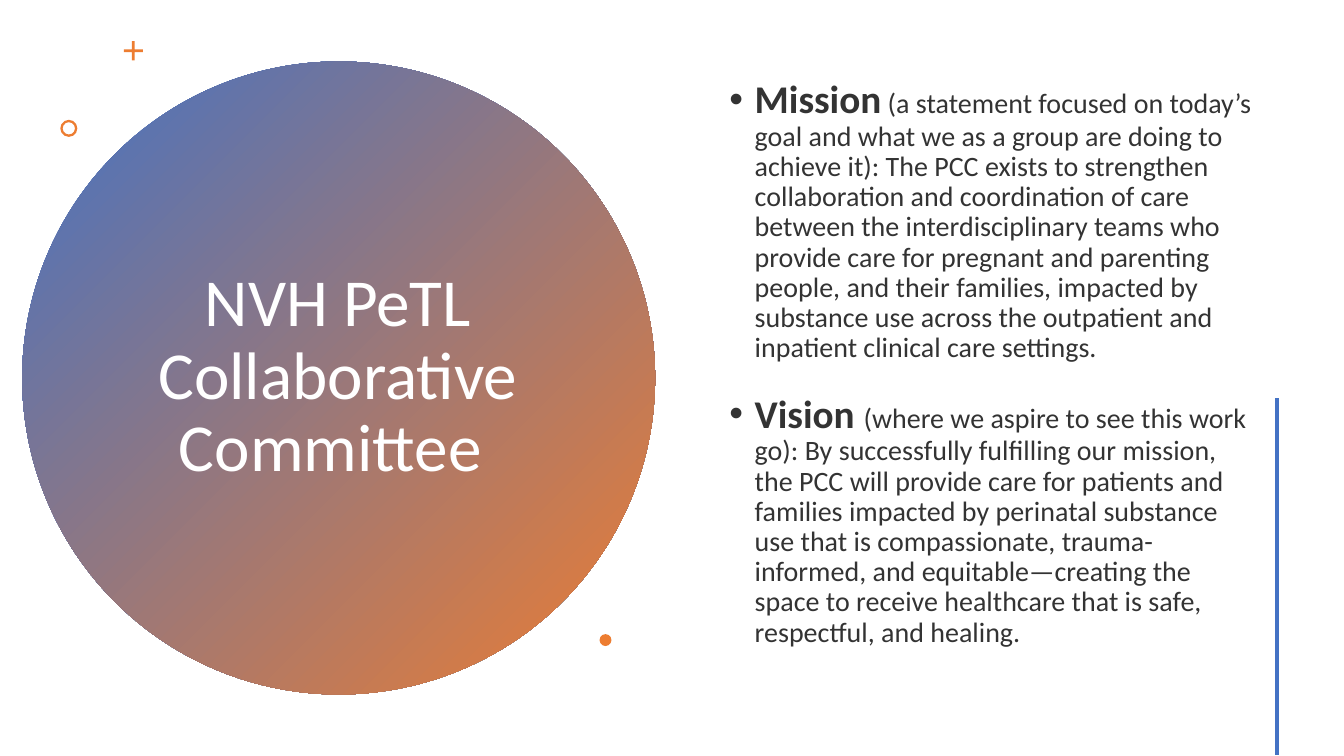
from lxml import etree
from pptx import Presentation
from pptx.dml.color import RGBColor
from pptx.enum.shapes import MSO_CONNECTOR, MSO_SHAPE
from pptx.enum.text import MSO_ANCHOR, PP_ALIGN
from pptx.oxml.ns import qn
from pptx.util import Cm, Pt

OVAL, RING, PLUS = MSO_SHAPE.OVAL, MSO_SHAPE.DONUT, MSO_SHAPE.CROSS
STRAIGHT = MSO_CONNECTOR.STRAIGHT
TOP, MIDDLE = MSO_ANCHOR.TOP, MSO_ANCHOR.MIDDLE
CENTER = PP_ALIGN.CENTER

TITLE_ONLY = 5
FONT = "Calibri"
COLORS = {"blue": "4472C4", "orange": "ED7D31", "white": "FFFFFF", "text": "333333"}

TITLE = "NVH PeTL Collaborative Committee "
STATEMENTS = [
    ("Mission",
     " (a statement focused on today’s goal and what we as a group are doing to "
     "achieve it): The PCC exists to strengthen collaboration and coordination of "
     "care between the interdisciplinary teams who provide care for pregnant and "
     "parenting people, and their families, impacted by substance use across the "
     "outpatient and inpatient clinical care settings."),
    ("Vision ",
     "(where we aspire to see this work go): By successfully fulfilling our "
     "mission, the PCC will provide care for patients and families impacted by "
     "perinatal substance use that is compassionate, trauma-informed, and "
     "equitable—creating the space to receive healthcare that is safe, "
     "respectful, and healing."),
]


def color(name):
    return RGBColor.from_string(COLORS[name])


def format_span(span, size, color_name, bold=False):
    span.font.name = FONT
    span.font.size = Pt(size)
    span.font.bold = bold
    span.font.color.rgb = color(color_name)


def add_round_shape(page, kind, left, top, size, thickness=None):
    """Add an orange shape as wide as it is high; thickness is its adjustment."""
    shape = page.shapes.add_shape(kind, Cm(left), Cm(top), Cm(size), Cm(size))
    shape.shadow.inherit = False
    shape.line.fill.background()
    shape.fill.solid()
    shape.fill.fore_color.rgb = color("orange")
    if thickness is not None:
        shape.adjustments[0] = thickness
    return shape


def add_title_circle(page):
    """Add the gradient circle behind the title."""
    circle = add_round_shape(page, OVAL, 0.56, 1.55, 15.95)
    circle.fill.gradient()
    circle.fill.gradient_angle = 315
    for stop, name in zip(circle.fill.gradient_stops, ("blue", "orange")):
        stop.color.rgb = color(name)
    page.shapes.title.element.addprevious(circle.element)


def set_title(page):
    title = page.shapes.title
    title.left, title.top = Cm(3.45), Cm(3.58)
    title.width, title.height = Cm(10.13), Cm(11.86)
    frame = title.text_frame
    frame.text = TITLE
    frame.word_wrap = True
    frame.vertical_anchor = MIDDLE
    para = frame.paragraphs[0]
    para.alignment = CENTER
    para.line_spacing = 0.9
    format_span(para.runs[0], 48, "white")


def set_bullet(para):
    properties = para._p.get_or_add_pPr()
    properties.set("marL", str(Cm(1.27)))
    properties.set("indent", str(-Cm(0.64)))
    etree.SubElement(properties, qn("a:buFont")).set("typeface", "Arial")
    etree.SubElement(properties, qn("a:buChar")).set("char", "•")


def add_statements(page):
    box = page.shapes.add_textbox(Cm(17.5), Cm(1.45), Cm(14.35), Cm(16.2))
    frame = box.text_frame
    frame.word_wrap = True
    frame.vertical_anchor = TOP
    frame.margin_top = Cm(0.56)
    for index, (heading, body) in enumerate(STATEMENTS):
        para = frame.add_paragraph() if index else frame.paragraphs[0]
        para.line_spacing = 0.9
        para.space_before = Pt(21.6 if index else 0)
        set_bullet(para)
        for words, size, bold in ((heading, 28, True), (body, 20, False)):
            span = para.add_run()
            span.text = words
            format_span(span, size, "text", bold)


def add_side_line(page):
    line = page.shapes.add_connector(
        STRAIGHT, Cm(32.18), Cm(10.03), Cm(32.18), Cm(19.02))
    line.line.color.rgb = color("blue")
    line.line.width = Pt(2.25)
    etree.SubElement(line.element.spPr, qn("a:effectLst"))


def main():
    deck = Presentation()
    deck.slide_width, deck.slide_height = Cm(33.87), Cm(19.05)
    page = deck.slides.add_slide(deck.slide_layouts[TITLE_ONLY])
    set_title(page)
    add_title_circle(page)
    add_round_shape(page, PLUS, 3.12, 1.04, 0.48, 0.43)
    add_round_shape(page, RING, 1.52, 3.02, 0.43, 0.14)
    add_statements(page)
    add_round_shape(page, OVAL, 15.11, 15.98, 0.3)
    add_side_line(page)
    deck.save("out.pptx")


if __name__ == "__main__":
    main()
